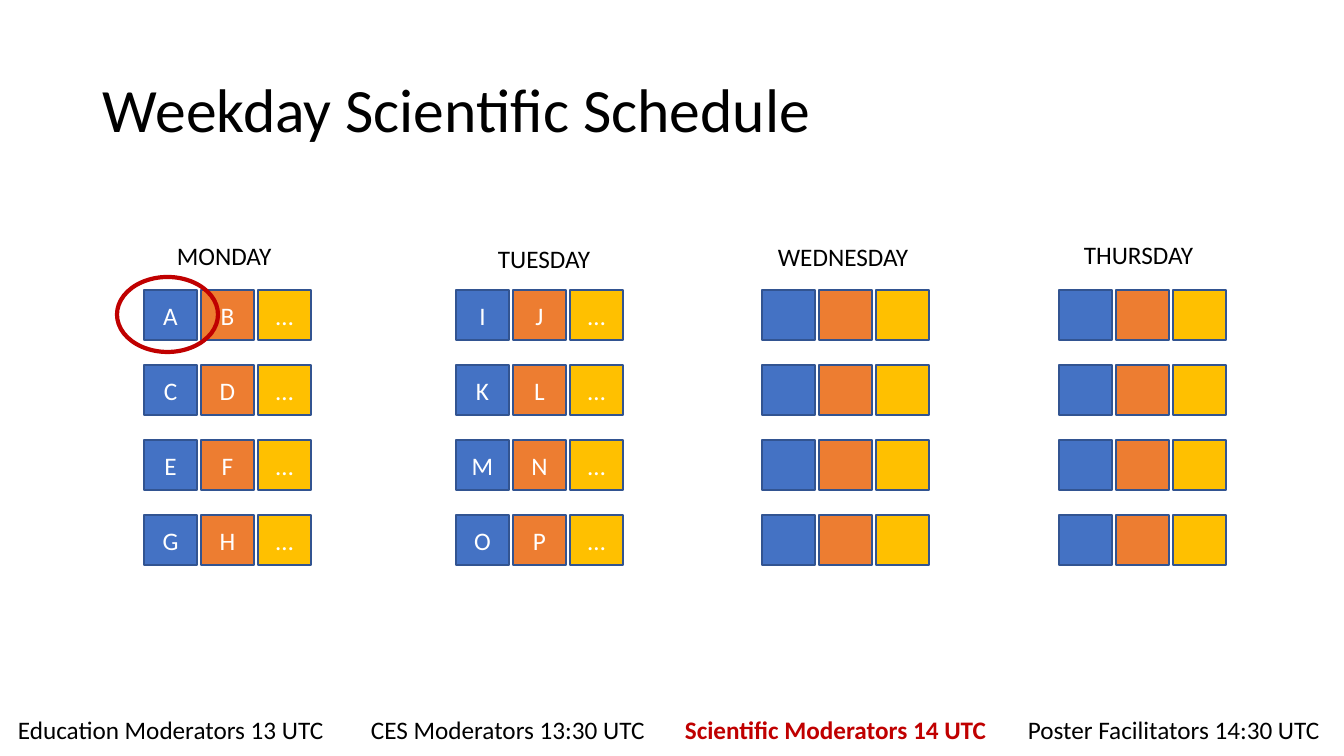
"""Builds the weekday scientific schedule slide."""
import pptx
import pptx.dml.color
import pptx.enum.shapes
import pptx.enum.text
import pptx.util

RGB = pptx.dml.color.RGBColor
SHAPE = pptx.enum.shapes.MSO_SHAPE
ANCHOR = pptx.enum.text.MSO_ANCHOR
AUTO_SIZE = pptx.enum.text.MSO_AUTO_SIZE
ALIGN = pptx.enum.text.PP_ALIGN

BLACK = RGB(0x00, 0x00, 0x00)
WHITE = RGB(0xFF, 0xFF, 0xFF)
BLUE = RGB(0x44, 0x72, 0xC4)
ORANGE = RGB(0xED, 0x7D, 0x31)
YELLOW = RGB(0xFF, 0xC0, 0x00)
CELL_EDGE = RGB(0x32, 0x54, 0x91)
RED = RGB(0xC0, 0x00, 0x00)

FONT = "Calibri"
EMU_PER_PX = 914400 / 100.8
SESSION_COLOURS = (BLUE, ORANGE, YELLOW)
SESSION_ROWS = 4
CELL_WIDTH, CELL_HEIGHT = 53, 50
COLUMN_PITCH, ROW_PITCH = 57, 75
GRID_TOP = 290
LABEL_HEIGHT = 40
FOOTER_TOP = 709

DAYS = (
    ("MONDAY", 167, 235, 126, 144, ("ACEG", "BDFH", "…" * SESSION_ROWS)),
    ("TUESDAY", 488, 238, 126, 456, ("IKMO", "JLNP", "…" * SESSION_ROWS)),
    ("WEDNESDAY", 768, 236, 152, 762, None),
    ("THURSDAY", 1074, 234, 152, 1059, None),
)
DUTIES = (
    ("Education Moderators 13 UTC", 8, 334, BLACK, False),
    ("CES Moderators 13:30 UTC", 361, 296, BLACK, False),
    ("Scientific Moderators 14 UTC", 675, 326, RED, True),
    ("Poster Facilitators 14:30 UTC", 1018, 314, BLACK, False),
)


def px(*lengths):
    """Turn pixel lengths into EMU."""
    return [pptx.util.Emu(round(length * EMU_PER_PX)) for length in lengths]


def style_paragraph(paragraph, colour, size=18, bold=False):
    """Set the font of a whole paragraph."""
    paragraph.font.name = FONT
    paragraph.font.size = pptx.util.Pt(size)
    paragraph.font.bold = bold
    paragraph.font.color.rgb = colour


def add_title(slide, text):
    """Add the vertically centred slide title."""
    frame = slide.shapes.add_textbox(*px(93, 40, 1159, 146)).text_frame
    frame.word_wrap = True
    frame.vertical_anchor = ANCHOR.MIDDLE
    frame.text = text
    frame.paragraphs[0].line_spacing = 0.9
    style_paragraph(frame.paragraphs[0], BLACK, size=44)


def add_label(slide, text, left, top, width, colour=BLACK, bold=False, wrap=True):
    """Add a one-line text label."""
    frame = slide.shapes.add_textbox(*px(left, top, width, LABEL_HEIGHT)).text_frame
    frame.word_wrap = wrap
    frame.auto_size = AUTO_SIZE.SHAPE_TO_FIT_TEXT
    frame.text = text
    style_paragraph(frame.paragraphs[0], colour, bold=bold)


def add_session(shapes, left, top, colour, letter):
    """Add one session cell, with its letter if it has one."""
    session = shapes.add_shape(SHAPE.RECTANGLE, *px(left, top, CELL_WIDTH, CELL_HEIGHT))
    session.shadow.inherit = False
    session.fill.solid()
    session.fill.fore_color.rgb = colour
    session.line.color.rgb = CELL_EDGE
    session.line.width = pptx.util.Pt(1)
    if letter:
        frame = session.text_frame
        frame.vertical_anchor = ANCHOR.MIDDLE
        frame.text = letter
        frame.paragraphs[0].alignment = ALIGN.CENTER
        style_paragraph(frame.paragraphs[0], WHITE)


def add_day_grid(slide, left, letters):
    """Add a day's sessions as one group per colour."""
    for column, colour in enumerate(SESSION_COLOURS):
        stack = slide.shapes.add_group_shape()
        for row in range(SESSION_ROWS):
            letter = letters[column][row] if letters else ""
            add_session(stack.shapes, left + column * COLUMN_PITCH,
                        GRID_TOP + row * ROW_PITCH, colour, letter)


def add_highlight(slide, left, top, width, height):
    """Add a red ring around a session."""
    ring = slide.shapes.add_shape(SHAPE.OVAL, *px(left, top, width, height))
    ring.shadow.inherit = False
    ring.fill.background()
    ring.line.color.rgb = RED
    ring.line.width = pptx.util.Pt(3)


def main():
    """Build and save the slide."""
    deck = pptx.Presentation()
    deck.slide_width, deck.slide_height = px(1344, 756)
    slide = deck.slides.add_slide(deck.slide_layouts[6])

    add_title(slide, "Weekday Scientific Schedule")
    for day, label_left, label_top, label_width, grid_left, letters in DAYS:
        add_day_grid(slide, grid_left, letters)
        add_label(slide, day, label_left, label_top, label_width)
    add_highlight(slide, 117, 277, 101, 75)
    for duty, left, width, colour, bold in DUTIES:
        add_label(slide, duty, left, FOOTER_TOP, width, colour, bold, wrap=False)

    deck.save("out.pptx")


if __name__ == "__main__":
    main()
